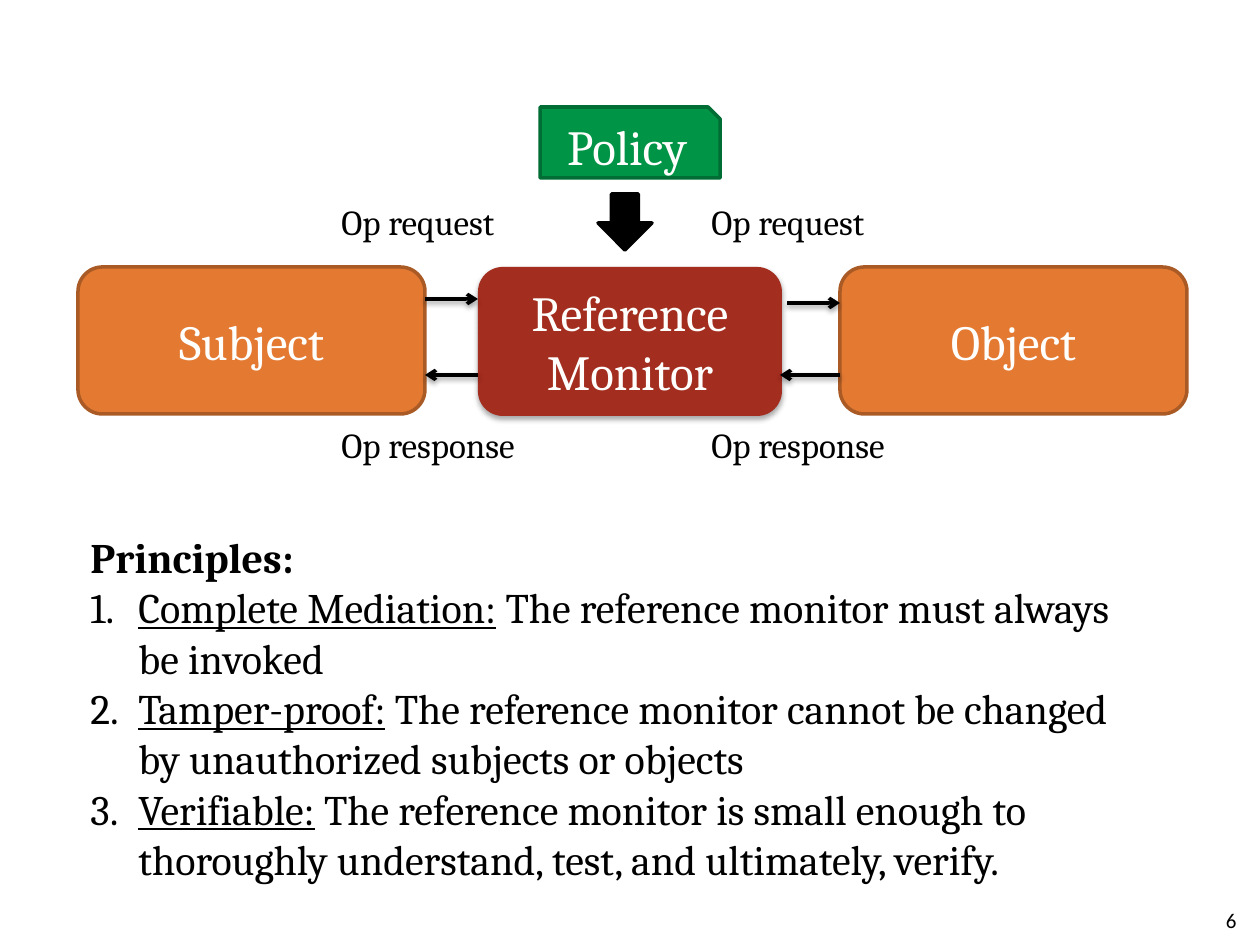
from lxml.etree import SubElement
from pptx import Presentation
from pptx.dml.color import RGBColor
from pptx.enum.shapes import MSO_CONNECTOR, MSO_SHAPE
from pptx.enum.text import MSO_ANCHOR, MSO_AUTO_SIZE, PP_ALIGN
from pptx.oxml.ns import qn
from pptx.util import Pt

PX = 7257.14  # EMU in one px
COLORS = {
    "black": "000000", "white": "FFFFFE",
    "orange": "E47932", "brown": "A95A25", "red": "A32D1F",
    "green": "009446", "dark green": "006D34",
}

# Content: text, preset, (left, top, width, height), fill, line, shadow
BLOCKS = [
    ("Subject", MSO_SHAPE.ROUNDED_RECTANGLE, (78, 267, 347, 147), "orange", "brown", False),
    ("Object", MSO_SHAPE.ROUNDED_RECTANGLE, (840, 267, 347, 147), "orange", "brown", False),
    ("Reference Monitor", MSO_SHAPE.ROUNDED_RECTANGLE, (478, 267, 304, 149), "red", None, True),
    ("Policy", MSO_SHAPE.SNIP_1_RECTANGLE, (540, 107, 180, 71), "green", "dark green", False),
    ("", MSO_SHAPE.DOWN_ARROW, (598, 194, 54, 56), "black", "black", False),
]
# from x, to x, y
ARROWS = [(425, 478, 299), (478, 425, 375), (840, 780, 375), (787, 840, 303)]
LABEL_LEFTS = (329, 699)
LABELS = [("Op request", 194, 192), ("Op response", 417, 214)]  # text, top, width
PRINCIPLES = [
    ("Complete Mediation:", " The reference monitor must always be invoked"),
    ("Tamper-proof:", " The reference monitor cannot be changed by unauthorized subjects or objects"),
    ("Verifiable:", " The reference monitor is small enough to thoroughly understand, test, "
                    "and ultimately, verify."),
]


def emu(*lengths):
    return [round(length * PX) for length in lengths]


def color(name):
    return RGBColor.from_string(COLORS[name])


def add_span(para, text, size=24, ink="black", font="Cambria", bold=False, underline=False):
    span = para.add_run()
    span.text = text
    span.font.size, span.font.name = Pt(size), font
    span.font.bold, span.font.underline = bold, underline
    span.font.color.rgb = color(ink)


def add_box(page, place, wrap=True, grow=True):
    frame = page.shapes.add_textbox(*emu(*place)).text_frame
    frame.word_wrap = wrap
    frame.auto_size = MSO_AUTO_SIZE.SHAPE_TO_FIT_TEXT if grow else MSO_AUTO_SIZE.NONE
    return frame


def add_shadow(shape, distance, alpha):
    properties = shape._element.spPr
    effects = properties.find(qn("a:effectLst"))
    if effects is None:
        effects = SubElement(properties, qn("a:effectLst"))
    shadow = SubElement(effects, qn("a:outerShdw"), blurRad="40000", dist=str(distance),
                        dir="5400000", rotWithShape="0")
    ink = SubElement(shadow, qn("a:srgbClr"), val=COLORS["black"])
    SubElement(ink, qn("a:alpha"), val=str(alpha * 1000))


def add_block(page, text, preset, place, fill, line, shadow):
    block = page.shapes.add_shape(preset, *emu(*place))
    block.shadow.inherit = False
    block.fill.solid()
    block.fill.fore_color.rgb = color(fill)
    if line:
        block.line.color.rgb = color(line)
        block.line.width = Pt(2)
    else:
        block.line.fill.background()
    if shadow:
        add_shadow(block, 23000, 35)
    if text:
        block.text_frame.word_wrap = True
        block.text_frame.vertical_anchor = MSO_ANCHOR.MIDDLE
        para = block.text_frame.paragraphs[0]
        para.alignment = PP_ALIGN.CENTER
        add_span(para, text, size=28, ink="white")


def add_arrow(page, start, end, y):
    arrow = page.shapes.add_connector(MSO_CONNECTOR.STRAIGHT, *emu(start, y, end, y))
    arrow.line.color.rgb = color("black")
    arrow.line.width = Pt(2)
    SubElement(arrow.line._get_or_add_ln(), qn("a:tailEnd"), type="arrow")
    add_shadow(arrow, 20000, 38)


def add_principles(page):
    frame = add_box(page, (78, 525, 1076, 369))
    add_span(frame.paragraphs[0], "Principles:", bold=True)
    indent = emu(48)[0]
    for name, meaning in PRINCIPLES:
        para = frame.add_paragraph()
        properties = para._p.get_or_add_pPr()
        properties.set("marL", str(indent))
        properties.set("indent", str(-indent))
        SubElement(properties, qn("a:buFont"), typeface="+mj-lt")
        SubElement(properties, qn("a:buAutoNum"), type="arabicPeriod")
        add_span(para, name, underline=True)
        add_span(para, meaning)


def main():
    deck = Presentation()
    deck.slide_width, deck.slide_height = emu(1260, 945)
    page = deck.slides.add_slide(deck.slide_layouts[6])

    # Diagram
    for block in BLOCKS:
        add_block(page, *block)
    for arrow in ARROWS:
        add_arrow(page, *arrow)
    for left in LABEL_LEFTS:
        for text, top, width in LABELS:
            frame = add_box(page, (left, top, width, 55), wrap=False)
            add_span(frame.paragraphs[0], text, size=20)

    add_principles(page)

    # Page number
    frame = add_box(page, (955, 895, 294, 50), grow=False)
    frame.vertical_anchor = MSO_ANCHOR.MIDDLE
    frame.paragraphs[0].alignment = PP_ALIGN.RIGHT
    add_span(frame.paragraphs[0], "6", size=12, font="Calibri")

    deck.save("out.pptx")


if __name__ == "__main__":
    main()
